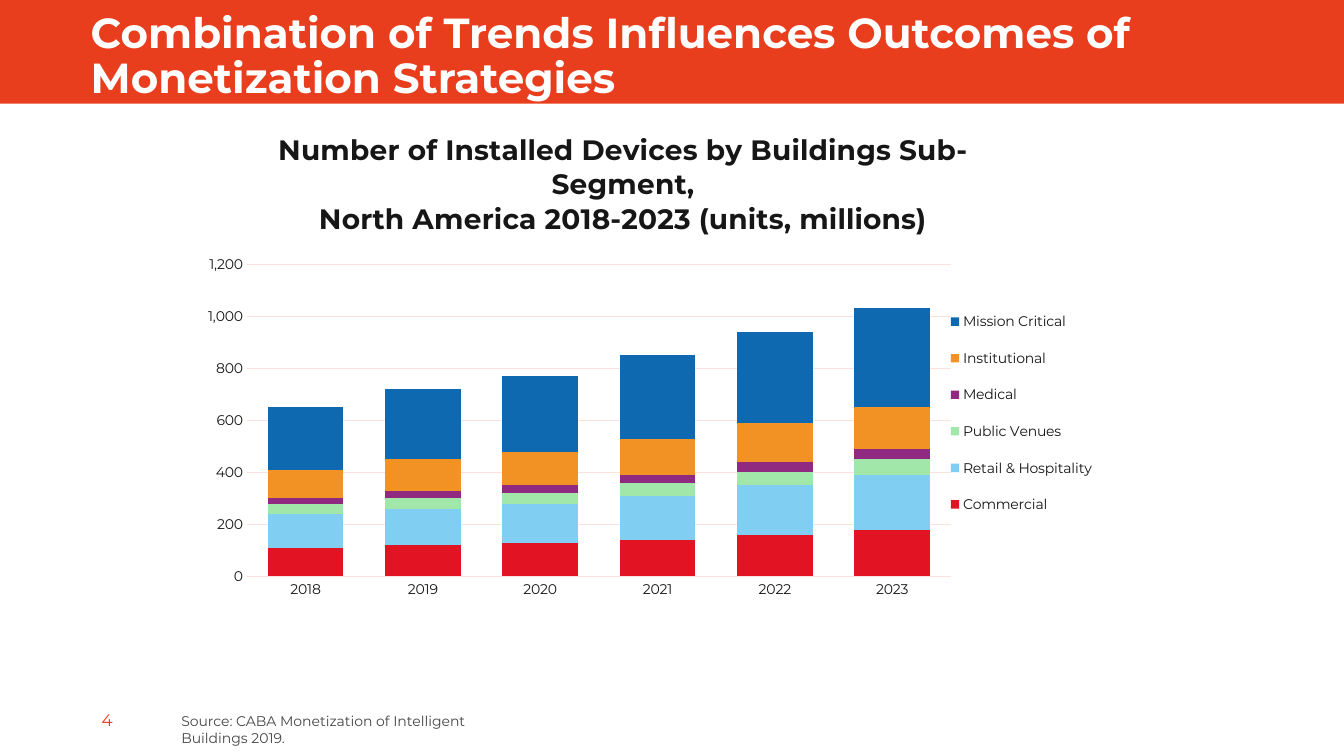
from dataclasses import dataclass

from lxml.etree import SubElement
from pptx import Presentation
from pptx.chart.data import CategoryChartData
from pptx.dml.color import RGBColor
from pptx.enum.chart import XL_CHART_TYPE, XL_LEGEND_POSITION, XL_TICK_MARK
from pptx.enum.shapes import MSO_SHAPE
from pptx.enum.text import MSO_ANCHOR
from pptx.oxml import parse_xml
from pptx.oxml.ns import nsdecls, qn
from pptx.util import Inches, Pt

FONT = "Montserrat"
COLORS = {
    "brand": "E83E1D",
    "white": "FFFFFF",
    "ink": "161616",
    "source": "464646",
    "grid": "FCE2DD",
    "red": "E21322",
    "sky": "80CEF2",
    "green": "A1E7A9",
    "purple": "902A81",
    "orange": "F29225",
    "blue": "0E69B0",
}


@dataclass(frozen=True)
class Segment:
    """A building sub-segment and its devices per year, in millions."""
    name: str
    color: str
    devices: tuple[int, ...]


@dataclass(frozen=True)
class Label:
    """A text box at the foot of the slide."""
    text: str
    place: tuple[float, float, float, float]
    size: int
    color: str
    anchor: MSO_ANCHOR


YEARS = [str(year) for year in range(2018, 2024)]
SEGMENTS = [
    Segment("Commercial", "red", (110, 120, 130, 140, 160, 180)),
    Segment("Retail & Hospitality", "sky", (130, 140, 150, 170, 190, 210)),
    Segment("Public Venues", "green", (40, 40, 40, 50, 50, 60)),
    Segment("Medical", "purple", (20, 30, 30, 30, 40, 40)),
    Segment("Institutional", "orange", (110, 120, 130, 140, 150, 160)),
    Segment("Mission Critical", "blue", (240, 270, 290, 320, 350, 380)),
]
LABELS = [
    Label("4", (0.91, 6.95, 0.68, 0.39), 12, "brand", MSO_ANCHOR.MIDDLE),
    Label("Source: CABA Monetization of Intelligent Buildings 2019.",
          (1.7, 7.02, 3.4, 0.27), 10, "source", MSO_ANCHOR.TOP),
]
CHART_TITLE = ("Number of Installed Devices by Buildings Sub-Segment,",
               "North America 2018-2023 (units, millions)")


def color_of(name: str) -> RGBColor:
    """Return the named colour."""
    return RGBColor.from_string(COLORS[name])


def style_font(font, *, size: int, color: str = "ink", bold: bool = False) -> None:
    """Format a font."""
    font.name = FONT
    font.size = Pt(size)
    font.bold = bold
    font.color.rgb = color_of(color)


def write(para, text: str, *, size: int, color: str, bold: bool = False) -> None:
    """Add one formatted span of text to a paragraph."""
    span = para.add_run()
    span.text = text
    style_font(span.font, size=size, color=color, bold=bold)


def add_label(page, label: Label) -> None:
    """Draw a text box."""
    box = page.shapes.add_textbox(*map(Inches, label.place))
    box.text_frame.word_wrap = True
    box.text_frame.vertical_anchor = label.anchor
    write(box.text_frame.paragraphs[0], label.text, size=label.size, color=label.color)


def add_header(page) -> None:
    """Draw the coloured band and place the slide title over it."""
    band = page.shapes.add_shape(
        MSO_SHAPE.RECTANGLE, 0, 0, Inches(13.33), Inches(1.03))
    band.shadow.inherit = False
    band.fill.solid()
    band.fill.fore_color.rgb = color_of("brand")
    band.line.fill.background()
    title = page.shapes.title
    title.left, title.top, title.width, title.height = map(
        Inches, (0.8, 0.07, 11.72, 0.49))
    band._element.addnext(title._element)
    frame = title.text_frame
    frame.word_wrap = True
    frame.vertical_anchor = MSO_ANCHOR.TOP
    para = frame.paragraphs[0]
    para.line_spacing = 0.9
    para.alignment = 1
    write(para, "Combination of Trends Influences Outcomes of Monetization Strategies",
          size=30, color="white", bold=True)


def set_layout(part, *, x: float, y: float, width: float = 0, height: float = 0,
               inner: bool = False) -> None:
    """Place a chart part by fractions of the chart area."""
    for old in part.findall(qn("c:layout")):
        part.remove(old)
    layout = parse_xml(f"<c:layout {nsdecls('c')}/>")
    manual = SubElement(layout, qn("c:manualLayout"))
    values = {"layoutTarget": "inner"} if inner else {}
    values |= {"xMode": "edge", "yMode": "edge", "x": x, "y": y}
    if width:
        values |= {"w": width, "h": height}
    for tag, value in values.items():
        SubElement(manual, qn(f"c:{tag}")).set("val", str(value))
    before = part.find(qn("c:tx"))
    if before is None:
        before = part.find(qn("c:legendPos"))
    if before is None:
        part.insert(0, layout)
    else:
        before.addnext(layout)


def style_axes(chart) -> None:
    """Format the year axis and the device axis."""
    years, devices = chart.category_axis, chart.value_axis
    for axis in (years, devices):
        axis.major_tick_mark = axis.minor_tick_mark = XL_TICK_MARK.NONE
        style_font(axis.tick_labels.font, size=10)
    devices.minimum_scale, devices.maximum_scale, devices.major_unit = 0, 1200, 200
    devices.tick_labels.number_format = "#,##0"
    devices.tick_labels.number_format_is_linked = False
    devices.format.line.fill.background()
    for line in (years.format.line, devices.major_gridlines.format.line):
        line.color.rgb = color_of("grid")
        line.width = Pt(0.75)


def add_device_chart(page) -> None:
    """Draw the stacked columns of installed devices."""
    data = CategoryChartData(number_format="#,##0")
    data.categories = YEARS
    for segment in SEGMENTS:
        data.add_series(segment.name, segment.devices)
    chart = page.shapes.add_chart(
        XL_CHART_TYPE.COLUMN_STACKED,
        *map(Inches, (1.89, 1.17, 9.31, 4.84)), data).chart
    style_font(chart.font, size=10)
    plot = chart.plots[0]
    plot.gap_width, plot.overlap, plot.vary_by_categories = 55, 100, False
    for series, segment in zip(plot.series, SEGMENTS):
        series.format.fill.solid()
        series.format.fill.fore_color.rgb = color_of(segment.color)
    style_axes(chart)

    frame = chart.chart_title.text_frame
    for index, text in enumerate(CHART_TITLE):
        para = frame.add_paragraph() if index else frame.paragraphs[0]
        style_font(para.font, size=20, bold=True)
        write(para, text, size=20, color="ink", bold=True)
    chart.chart_title.include_in_layout = False
    chart.has_legend = True
    chart.legend.position = XL_LEGEND_POSITION.RIGHT
    chart.legend.include_in_layout = False
    style_font(chart.legend.font, size=10)

    set_layout(chart.chart_title._element, x=0.09, y=0.02)
    set_layout(chart.legend._element, x=0.8, y=0.36, width=0.17, height=0.49)
    set_layout(chart._chartSpace.chart.plotArea,
               x=0.06, y=0.3, width=0.75, height=0.64, inner=True)


def main() -> None:
    """Build the slide and save it."""
    deck = Presentation()
    deck.slide_width, deck.slide_height = Inches(13.33), Inches(7.5)
    page = deck.slides.add_slide(deck.slide_layouts[5])
    add_header(page)
    add_device_chart(page)
    for label in LABELS:
        add_label(page, label)
    deck.save("out.pptx")


if __name__ == "__main__":
    main()
